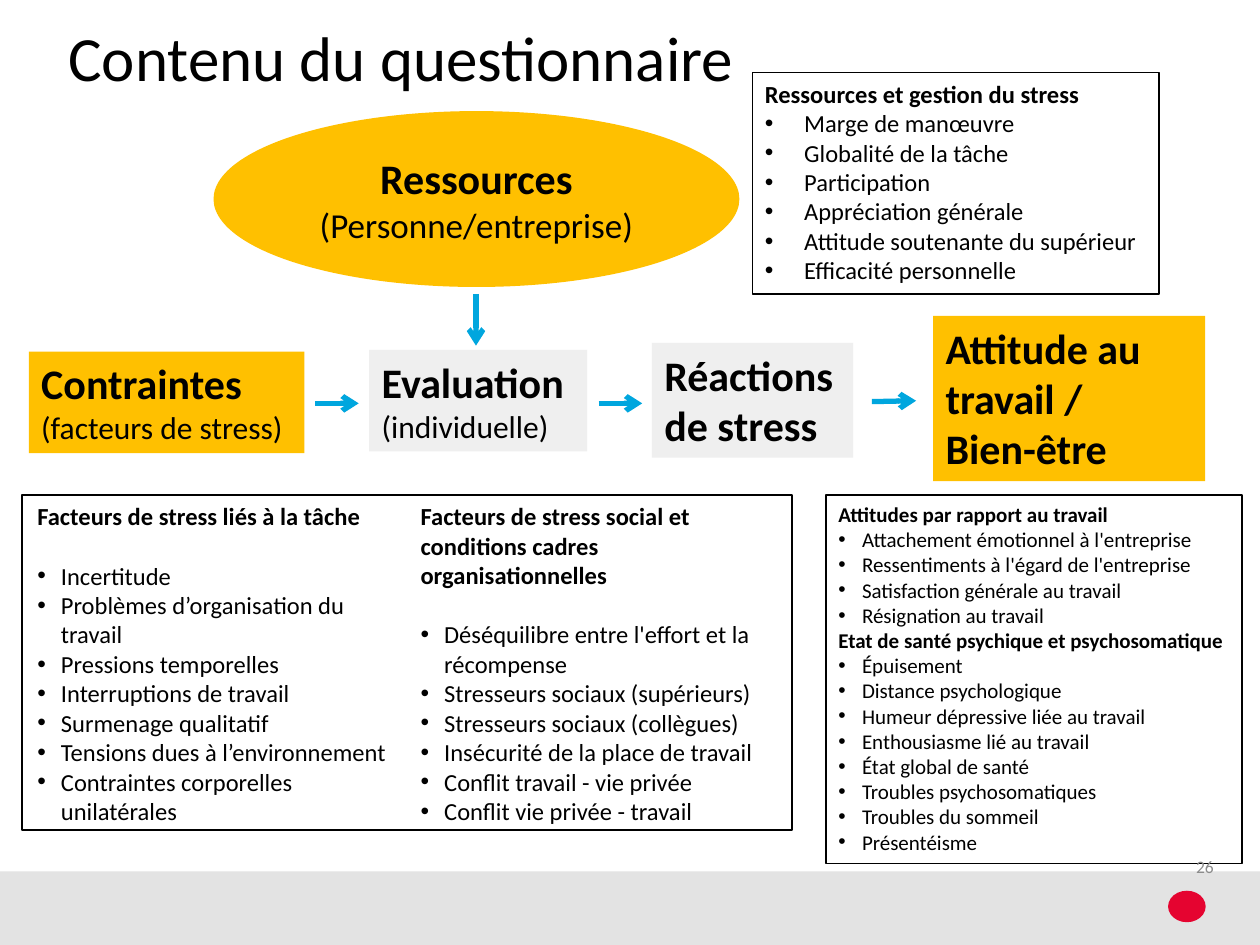
from dataclasses import dataclass

from lxml.etree import SubElement
from pptx import Presentation
from pptx.dml.color import RGBColor
from pptx.enum.shapes import MSO_CONNECTOR as Connector, MSO_SHAPE as Shape
from pptx.enum.text import MSO_ANCHOR as Anchor, MSO_AUTO_SIZE as AutoSize, PP_ALIGN as Align
from pptx.oxml.ns import qn
from pptx.util import Pt

FONT = "Calibri"
COLORS = {
    "text": "000000",
    "amber": "FFC000",
    "pale": "EFEFEF",
    "band": "E3E3E3",
    "arrow": "00A6DE",
    "logo": "E50430",
    "number": "8C8C8C",
}


@dataclass(frozen=True)
class Area:
    left: float
    top: float
    width: float
    height: float

    def lengths(self) -> tuple:
        return Pt(self.left), Pt(self.top), Pt(self.width), Pt(self.height)


@dataclass(frozen=True)
class Line:
    text: str
    size: float
    bold: bool = False


@dataclass(frozen=True)
class Stage:
    area: Area
    fill: str
    lines: tuple[Line, ...]
    shape: Shape = Shape.RECTANGLE
    align: Align = Align.LEFT
    anchor: Anchor = Anchor.TOP


@dataclass(frozen=True)
class Section:
    heading: str
    items: tuple[str, ...]


@dataclass(frozen=True)
class Listing:
    area: Area
    size: float
    indent: float
    sections: tuple[Section, ...]
    heading_gap: float = 0
    framed: bool = True


@dataclass(frozen=True)
class Arrow:
    start: tuple[float, float]
    end: tuple[float, float]


STAGES = (
    Stage(Area(16.5, 201, 157.5, 58), "amber",
          (Line("Contraintes", 24, True), Line("(facteurs de stress)", 18))),
    Stage(Area(211, 200, 124.5, 58), "pale",
          (Line("Evaluation", 24, True), Line("(individuelle)", 18))),
    Stage(Area(372.5, 196, 115, 65.5), "pale", (Line("Réactions de stress", 24, True),)),
    Stage(Area(533.25, 180.5, 155.5, 94.5), "amber",
          (Line("Attitude au travail /", 24, True), Line("Bien-être", 24, True))),
    Stage(Area(122, 63.5, 300.5, 100.5), "amber",
          (Line("Ressources", 24, True), Line("(Personne/entreprise)", 20)),
          Shape.OVAL, Align.CENTER, Anchor.MIDDLE),
)

STRESS_FRAME = Area(12.5, 283, 440, 191.5)
COLUMN_WIDTH = 219

LISTINGS = (
    Listing(Area(14.25, 283, COLUMN_WIDTH, 193.5), 14, 13.5, (
        Section("Facteurs de stress liés à la tâche", (
            "Incertitude",
            "Problèmes d’organisation du travail",
            "Pressions temporelles",
            "Interruptions de travail",
            "Surmenage qualitatif",
            "Tensions dues à l’environnement",
            "Contraintes corporelles unilatérales")),
    ), heading_gap=17, framed=False),
    Listing(Area(14.25 + COLUMN_WIDTH, 283, COLUMN_WIDTH, 208), 14, 13.5, (
        Section("Facteurs de stress social et conditions cadres organisationnelles", (
            "Déséquilibre entre l'effort et la récompense",
            "Stresseurs sociaux (supérieurs)",
            "Stresseurs sociaux (collègues)",
            "Insécurité de la place de travail",
            "Conflit travail - vie privée",
            "Conflit vie privée - travail")),
    ), heading_gap=17, framed=False),
    Listing(Area(430, 41.5, 232.5, 126.5), 14, 22.5, (
        Section("Ressources et gestion du stress", (
            "Marge de manœuvre",
            "Globalité de la tâche",
            "Participation",
            "Appréciation générale",
            "Attitude soutenante du supérieur",
            "Efficacité personnelle")),
    )),
    Listing(Area(472, 283, 237.75, 210.5), 12, 13.5, (
        Section("Attitudes par rapport au travail", (
            "Attachement émotionnel à l'entreprise",
            "Ressentiments à l'égard de l'entreprise",
            "Satisfaction générale au travail",
            "Résignation au travail")),
        Section("Etat de santé psychique et psychosomatique", (
            "Épuisement",
            "Distance psychologique",
            "Humeur dépressive liée au travail",
            "Enthousiasme lié au travail",
            "État global de santé",
            "Troubles psychosomatiques",
            "Troubles du sommeil",
            "Présentéisme")),
    )),
)

ARROWS = (
    Arrow((180, 230.5), (205, 230.5)),
    Arrow((342, 230.5), (367, 230.5)),
    Arrow((498.25, 229.5), (523.5, 229)),
    Arrow((272, 168), (272, 197.5)),
)


def color(name: str) -> RGBColor:
    return RGBColor.from_string(COLORS[name])


def prepare_frame(frame, anchor=Anchor.TOP, inset=None) -> None:
    frame.word_wrap = True
    frame.auto_size = AutoSize.NONE
    frame.vertical_anchor = anchor
    if inset is not None:
        frame.margin_left = frame.margin_right = Pt(inset)
        frame.margin_top = frame.margin_bottom = Pt(inset)


def write(frame, text: str, *, size: float, bold=False, ink="text", align=Align.LEFT,
          bullet_indent=0.0, space_after=0.0, line_spacing=None) -> None:
    """Fill the first paragraph if it is still empty, otherwise append one."""
    paragraph = frame.paragraphs[0] if not frame.text else frame.add_paragraph()
    paragraph.alignment = align
    paragraph.space_before = Pt(0)
    paragraph.space_after = Pt(space_after)
    if line_spacing:
        paragraph.line_spacing = Pt(line_spacing)
    if bullet_indent:
        properties = paragraph._p.get_or_add_pPr()
        properties.set("marL", str(Pt(bullet_indent)))
        properties.set("indent", str(-Pt(bullet_indent)))
        SubElement(properties, qn("a:buFont"), typeface="Arial")
        SubElement(properties, qn("a:buChar"), char="•")
    run = paragraph.add_run()
    run.text = text
    run.font.name = FONT
    run.font.size = Pt(size)
    run.font.bold = bold
    run.font.color.rgb = color(ink)


def add_box(slide, area: Area, kind=Shape.RECTANGLE, fill=None, outline=None):
    shape = slide.shapes.add_shape(kind, *area.lengths())
    shape.shadow.inherit = False
    if fill:
        shape.fill.solid()
        shape.fill.fore_color.rgb = color(fill)
    else:
        shape.fill.background()
    if outline:
        shape.line.color.rgb = color(outline)
        shape.line.width = Pt(1)
    else:
        shape.line.fill.background()
    return shape


def add_stage(slide, stage: Stage) -> None:
    frame = add_box(slide, stage.area, stage.shape, stage.fill).text_frame
    prepare_frame(frame, stage.anchor)
    for line in stage.lines:
        write(frame, line.text, size=line.size, bold=line.bold, align=stage.align)


def add_listing(slide, listing: Listing) -> None:
    if listing.framed:
        shape = add_box(slide, listing.area, outline="text")
    else:
        shape = slide.shapes.add_textbox(*listing.area.lengths())
    frame = shape.text_frame
    prepare_frame(frame)
    for section in listing.sections:
        write(frame, section.heading, size=listing.size, bold=True,
              space_after=listing.heading_gap)
        for item in section.items:
            write(frame, item, size=listing.size, bullet_indent=listing.indent)


def add_arrow(slide, arrow: Arrow) -> None:
    points = (Pt(value) for value in arrow.start + arrow.end)
    connector = slide.shapes.add_connector(Connector.STRAIGHT, *points)
    connector.line.color.rgb = color("arrow")
    connector.line.width = Pt(3)
    SubElement(connector.line._get_or_add_ln(), qn("a:tailEnd"), type="arrow")
    SubElement(connector._element.spPr, qn("a:effectLst"))


def main() -> None:
    presentation = Presentation()
    presentation.slide_width, presentation.slide_height = Pt(720), Pt(540)
    slide = presentation.slides.add_slide(presentation.slide_layouts[5])

    title = slide.shapes.title
    title.left, title.top, title.width, title.height = Area(39, 14.5, 623.5, 58).lengths()
    prepare_frame(title.text_frame, inset=0)
    write(title.text_frame, "Contenu du questionnaire", size=36, line_spacing=39)

    add_box(slide, Area(0, 498, 720, 42), fill="band")
    add_box(slide, Area(667.5, 509, 21.5, 18), Shape.OVAL, fill="logo")
    for listing in LISTINGS:
        add_listing(slide, listing)
    add_box(slide, STRESS_FRAME, outline="text")
    number = slide.shapes.add_textbox(*Area(683.5, 489, 23.5, 12).lengths())
    prepare_frame(number.text_frame, Anchor.MIDDLE, inset=0)
    write(number.text_frame, "26", size=10, ink="number")
    for stage in STAGES:
        add_stage(slide, stage)
    for arrow in ARROWS:
        add_arrow(slide, arrow)
    presentation.save("out.pptx")


if __name__ == "__main__":
    main()
